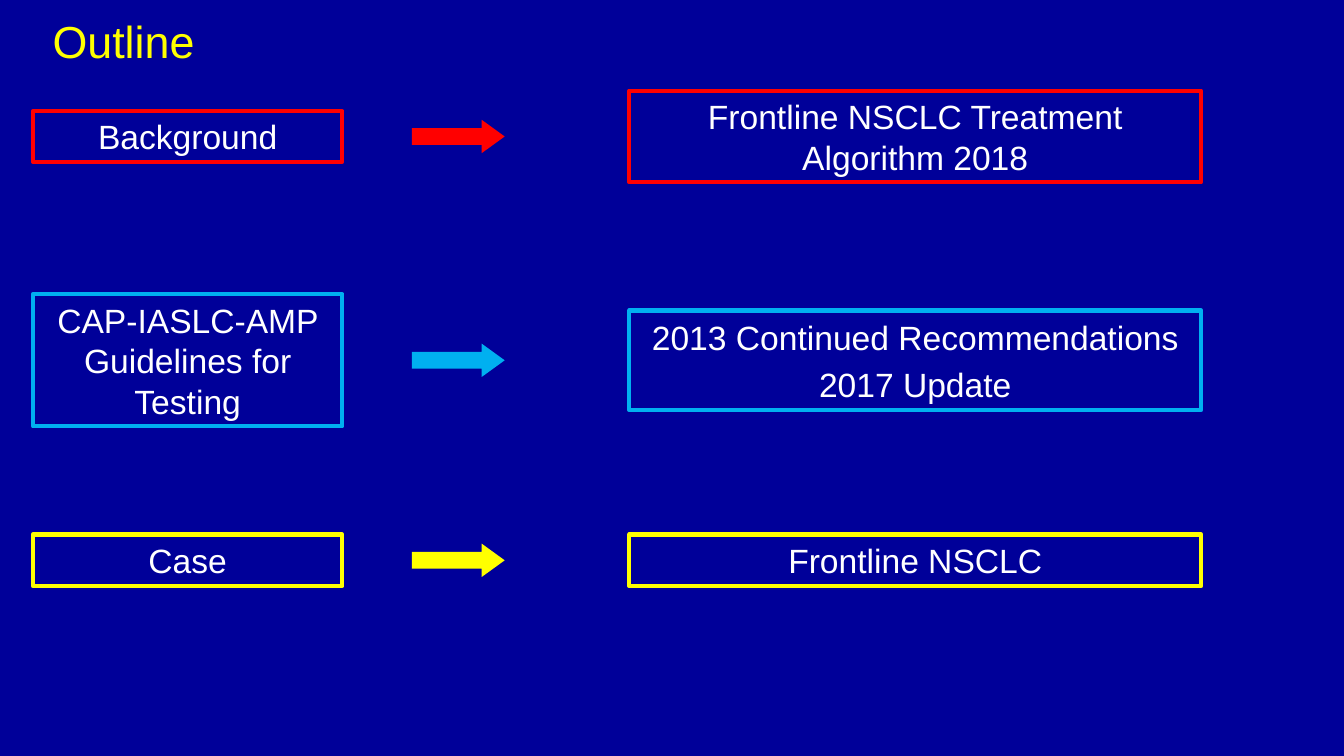
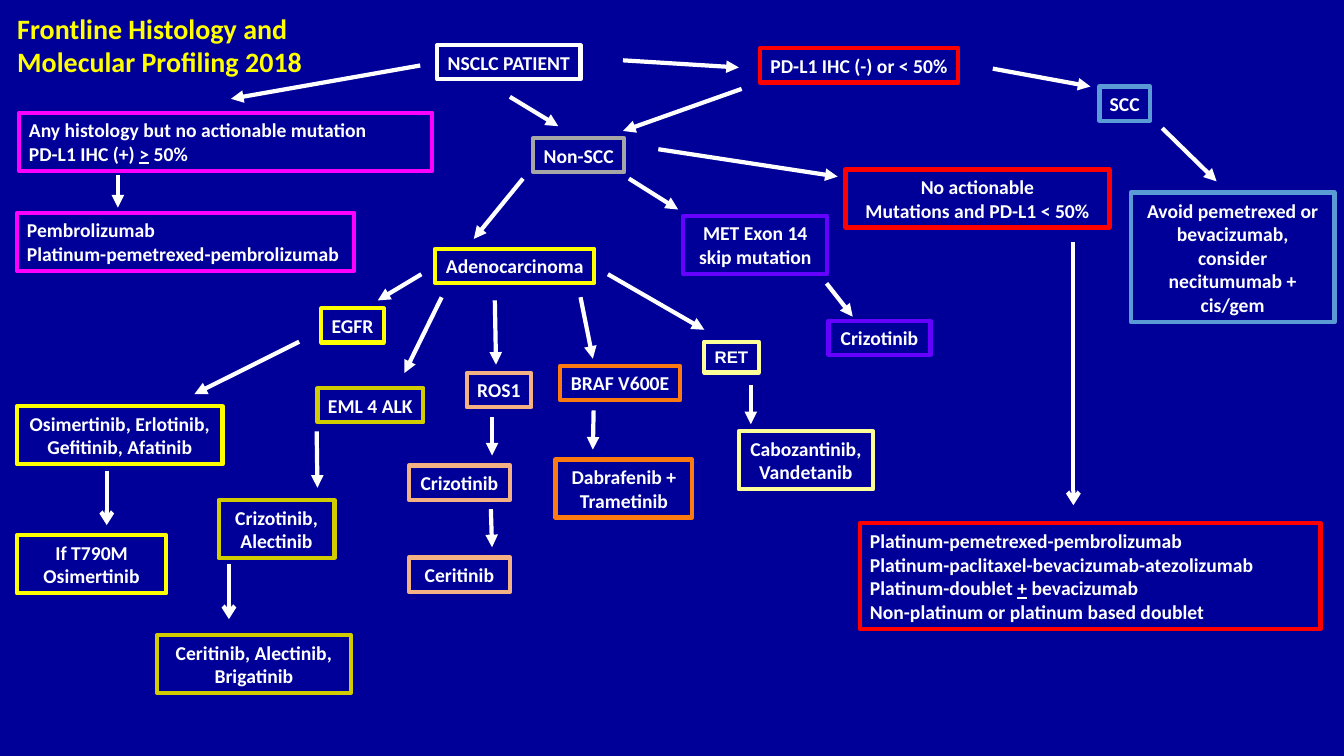
from dataclasses import dataclass
from typing import NamedTuple

from lxml.etree import SubElement
from pptx import Presentation
from pptx.dml.color import RGBColor
from pptx.enum.shapes import MSO_CONNECTOR, MSO_SHAPE
from pptx.enum.text import MSO_ANCHOR, MSO_AUTO_SIZE, PP_ALIGN
from pptx.oxml.ns import qn
from pptx.shapes.autoshape import Shape
from pptx.slide import Slide
from pptx.util import Cm, Pt

NAVY = "000099"
WHITE = "FFFFFF"
YELLOW = "FFFF00"
RED = "FF0000"
CYAN = "00B0F0"
PINK = "FF00FF"
BLUE = "5B9BD5"
GREY = "A6A6A6"
OLIVE = "D1CC00"
PEACH = "F4B183"
ORANGE = "FC7B10"
CREAM = "FFFF99"
PURPLE = "6600FF"

LEFT = PP_ALIGN.LEFT
CENTER = PP_ALIGN.CENTER


class Area(NamedTuple):
    x: float
    y: float
    w: float
    h: float


class Font(NamedTuple):
    name: str
    size: int
    bold: bool = False
    tint: str = WHITE


class Row(NamedTuple):
    tint: str
    mid: float
    topic: str
    high: float
    detail: str
    tall: float
    body: bool = False


class Link(NamedTuple):
    x1: float
    y1: float
    x2: float
    y2: float
    head: str = "triangle"


BIG = Font("Arial", 24)
SMALL = Font("Calibri", 14, True)


@dataclass
class Node:
    tint: str
    x: float
    y: float
    w: float
    text: str
    rows: int = 1
    align: PP_ALIGN = CENTER
    font: Font = SMALL
    body: bool = False

    def area(self) -> Area:
        return Area(self.x, self.y, self.w, 0.26 + 0.043 * self.font.size * self.rows)


TOPICS = [
    Row(RED, 3.44, "Background", 1.27, "Frontline NSCLC Treatment Algorithm 2018", 2.31),
    Row(CYAN, 9.08, "CAP-IASLC-AMP Guidelines for Testing", 3.33,
        "2013 Continued Recommendations\n2017 Update", 2.51, True),
    Row(YELLOW, 14.12, "Case", 1.3, "Frontline NSCLC", 1.3),
]

NODES = [
    Node(WHITE, 11.02, 1.14, 3.61, "NSCLC PATIENT"),
    Node(RED, 19.15, 1.22, 5, "PD-L1 IHC (-) or < 50%"),
    Node(RED, 21.31, 4.27, 6.65, "No actionable\nMutations and PD-L1 < 50%", 2),
    Node(RED, 21.67, 13.18, 11.61,
         "Platinum-pemetrexed-pembrolizumab\nPlatinum-paclitaxel-bevacizumab-atezolizumab\n"
         "Platinum-doublet _+_ bevacizumab\nNon-platinum or platinum based doublet",
         4, LEFT, body=True),
    Node(BLUE, 27.71, 2.18, 1.27, "SCC"),
    Node(BLUE, 28.5, 4.85, 5.13,
         "Avoid pemetrexed or bevacizumab, consider necitumumab + cis/gem", 5),
    Node(PINK, 0.48, 2.84, 10.41,
         "Any histology but no actionable mutation\nPD-L1 IHC (+) _>_ 50%", 2, LEFT),
    Node(PINK, 0.43, 5.36, 8.5, "Pembrolizumab\nPlatinum-pemetrexed-pembrolizumab", 2, LEFT),
    Node(GREY, 13.44, 3.48, 2.29, "Non-SCC"),
    Node(YELLOW, 10.97, 6.27, 4.01, "Adenocarcinoma"),
    Node(YELLOW, 8.1, 7.77, 1.57, "EGFR"),
    Node(YELLOW, 0.43, 10.24, 5.18, "Osimertinib, Erlotinib,\nGefitinib, Afatinib", 2),
    Node(YELLOW, 0.43, 13.49, 3.76, "If T790M Osimertinib", 2),
    Node(OLIVE, 8, 9.78, 2.67, "EML 4 ALK"),
    Node(OLIVE, 5.51, 12.6, 2.92, "Crizotinib, Alectinib", 2),
    Node(OLIVE, 3.96, 16, 4.88, "Ceritinib, Alectinib, Brigatinib", 2),
    Node(PEACH, 11.76, 9.4, 1.63, "ROS1"),
    Node(PEACH, 10.3, 11.73, 2.56, "Crizotinib"),
    Node(PEACH, 10.3, 14.05, 2.56, "Ceritinib"),
    Node(ORANGE, 14.12, 9.22, 3.02, "BRAF V600E"),
    Node(ORANGE, 14, 11.58, 3.45, "Dabrafenib + Trametinib", 2),
    Node(CREAM, 17.75, 8.61, 1.37, "RET", font=Font("Arial", 12, True)),
    Node(CREAM, 18.62, 10.87, 3.38, "Cabozantinib, Vandetanib", 2),
    Node(PURPLE, 17.22, 5.44, 3.63, "MET Exon 14 skip mutation", 2),
    Node(PURPLE, 20.88, 8.08, 2.57, "Crizotinib"),
]

LINKS = [
    Link(10.59, 1.65, 5.82, 2.49),
    Link(15.7, 1.52, 18.62, 1.7),
    Link(12.85, 2.44, 14.07, 3.18),
    Link(18.69, 2.24, 15.7, 3.3),
    Link(25.02, 1.73, 27.48, 2.18),
    Link(29.29, 3.23, 30.66, 4.57),
    Link(2.97, 4.42, 2.97, 5.23),
    Link(13.18, 4.5, 11.94, 6.02),
    Link(16.59, 3.76, 21.11, 4.45),
    Link(15.85, 4.5, 17.09, 5.28),
    Link(20.83, 7.14, 21.49, 7.98),
    Link(10.62, 6.91, 9.52, 7.57),
    Link(11.13, 7.49, 10.19, 9.4),
    Link(12.47, 7.57, 12.5, 9.19),
    Link(14.63, 7.49, 14.94, 9.04),
    Link(15.32, 6.91, 17.75, 8.31),
    Link(7.54, 8.61, 4.9, 9.93),
    Link(7.98, 10.87, 8, 12.29),
    Link(12.4, 10.52, 12.4, 11.48),
    Link(12.37, 12.83, 12.4, 13.79),
    Link(14.96, 10.34, 14.94, 11.33),
    Link(18.92, 9.7, 18.92, 10.69),
    Link(2.69, 11.86, 2.69, 13.23, "arrow"),
    Link(5.77, 14.22, 5.77, 15.6, "arrow"),
    Link(27.05, 6.1, 27.05, 12.73, "arrow"),
]


def shade(code: str) -> RGBColor:
    return RGBColor.from_string(code)


def place(shape: Shape, area: Area) -> None:
    shape.left, shape.top, shape.width, shape.height = map(Cm, area)


def write(shape: Shape, text: str, font: Font, align: PP_ALIGN,
          anchor: MSO_ANCHOR = MSO_ANCHOR.MIDDLE, wrap: bool = True, gap: float = 0) -> None:
    frame = shape.text_frame
    frame.auto_size = MSO_AUTO_SIZE.NONE
    frame.word_wrap = wrap
    frame.vertical_anchor = anchor
    for num, line in enumerate(text.split("\n")):
        para = frame.add_paragraph() if num else frame.paragraphs[0]
        para.alignment = align
        para.space_before = Pt(gap if num else 0)
        for part, piece in enumerate(line.split("_")):
            run = para.add_run()
            run.text = piece
            run.font.name = font.name
            run.font.size = Pt(font.size)
            run.font.bold = font.bold
            run.font.underline = part % 2 == 1
            run.font.color.rgb = shade(font.tint)


def plain(shape: Shape) -> None:
    for para in shape.text_frame.paragraphs:
        props = para._p.get_or_add_pPr()
        props.set("marL", "0")
        props.set("indent", "0")
        SubElement(props, qn("a:buNone"))


def frame_box(slide: Slide, area: Area, tint: str, text: str, font: Font,
              align: PP_ALIGN = CENTER, body: bool = False,
              wrap: bool = True, gap: float = 0) -> None:
    if body:
        box = slide.placeholders[1]
        place(box, area)
    else:
        box = slide.shapes.add_shape(MSO_SHAPE.RECTANGLE, *map(Cm, area))
        box.shadow.inherit = False
    box.fill.background()
    box.line.color.rgb = shade(tint)
    box.line.width = Pt(3)
    write(box, text, font, align, wrap=wrap, gap=gap)
    if body:
        plain(box)


def block(slide: Slide, area: Area, tint: str) -> None:
    arrow = slide.shapes.add_shape(MSO_SHAPE.RIGHT_ARROW, *map(Cm, area))
    arrow.adjustments[1] = 0.69
    arrow.shadow.inherit = False
    arrow.fill.solid()
    arrow.fill.fore_color.rgb = shade(tint)
    arrow.line.fill.background()


def join(slide: Slide, link: Link) -> None:
    line = slide.shapes.add_connector(MSO_CONNECTOR.STRAIGHT, *map(Cm, link[:4]))
    line.line.color.rgb = shade(WHITE)
    line.line.width = Pt(3)
    props = line._element.spPr
    SubElement(props.find(qn("a:ln")), qn("a:tailEnd"), type=link.head)
    SubElement(props, qn("a:effectLst"))


def start(deck: Presentation, title: str, area: Area, font: Font, anchor: MSO_ANCHOR) -> Slide:
    slide = deck.slides.add_slide(deck.slide_layouts[1])
    place(slide.shapes.title, area)
    write(slide.shapes.title, title, font, LEFT, anchor)
    return slide


def outline(deck: Presentation) -> None:
    slide = start(deck, "Outline", Area(1.07, 0.13, 25.4, 1.78),
                  Font("Arial", 32, tint=YELLOW), MSO_ANCHOR.MIDDLE)
    for row in TOPICS:
        near = Area(0.83, row.mid - row.high / 2, 7.8, row.high)
        far = Area(15.86, row.mid - row.tall / 2, 14.41, row.tall)
        frame_box(slide, near, row.tint, row.topic, BIG)
        block(slide, Area(10.38, row.mid - 0.42, 2.34, 0.84), row.tint)
        frame_box(slide, far, row.tint, row.detail, BIG, body=row.body, gap=4.8)


def chart(deck: Presentation) -> None:
    slide = start(deck, "Frontline Histology and Molecular Profiling 2018",
                  Area(0.18, 0.15, 9, 1.78), Font("Calibri", 20, True, YELLOW), MSO_ANCHOR.TOP)
    for node in NODES:
        frame_box(slide, node.area(), node.tint, node.text, node.font,
                  node.align, node.body, node.rows > 1)
    for link in LINKS:
        join(slide, link)


def main() -> None:
    deck = Presentation()
    deck.slide_width, deck.slide_height = Cm(33.87), Cm(19.05)
    fill = deck.slide_master.background.fill
    fill.solid()
    fill.fore_color.rgb = shade(NAVY)
    outline(deck)
    chart(deck)
    deck.save("out.pptx")


if __name__ == "__main__":
    main()
